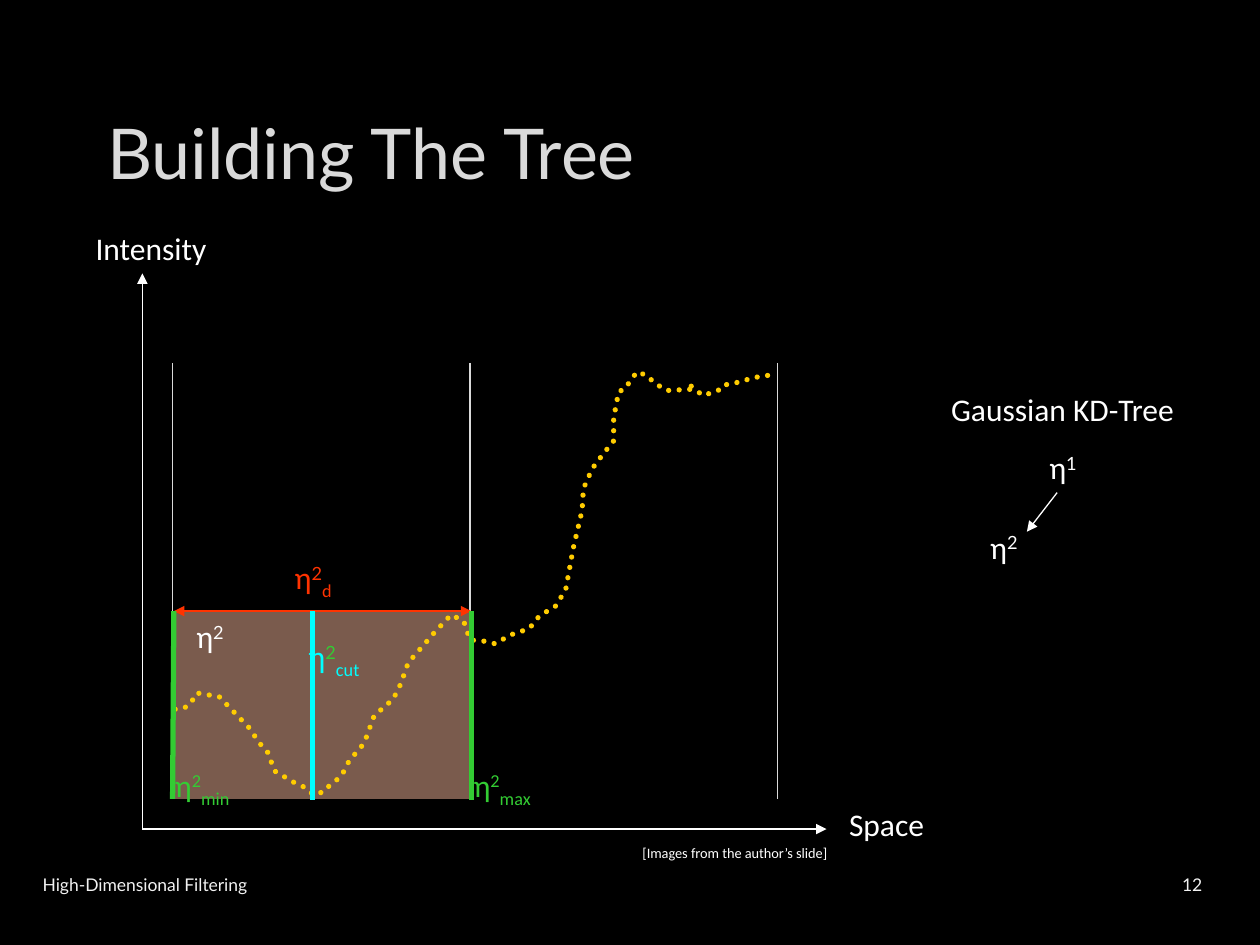
"""Build the slide on building a Gaussian KD-tree."""
from dataclasses import dataclass

from lxml import etree
from pptx import Presentation
from pptx.dml.color import RGBColor
from pptx.enum.dml import MSO_LINE
from pptx.enum.shapes import MSO_CONNECTOR, MSO_SHAPE
from pptx.enum.text import MSO_ANCHOR, PP_ALIGN
from pptx.oxml.ns import qn
from pptx.util import Inches, Pt

BLACK = RGBColor(0x00, 0x00, 0x00)
WHITE = RGBColor(0xFF, 0xFF, 0xFF)
PALE = RGBColor(0xF2, 0xF2, 0xF2)
GREY = RGBColor(0xDA, 0xDA, 0xDA)
PEACH = RGBColor(0xF4, 0xB6, 0x9B)
YELLOW = RGBColor(0xFF, 0xCC, 0x00)
RED = RGBColor(0xFF, 0x33, 0x00)
GREEN = RGBColor(0x33, 0xCC, 0x33)
CYAN = RGBColor(0x00, 0xFF, 0xFF)

LEFT, CUT, MIDDLE, RIGHT = 1.37, 2.48, 3.73, 6.17
TOP, SPLIT, BOTTOM = 2.88, 4.85, 6.34
ORIGIN = (1.13, 6.58)


@dataclass(frozen=True)
class Stroke:
    start: tuple[float, float]
    end: tuple[float, float]
    color: RGBColor
    width: float = 0.75
    heads: tuple[str, ...] = ()


@dataclass(frozen=True)
class Piece:
    text: str
    font: str = "Calibri"
    baseline: int = 0
    color: RGBColor | None = None


@dataclass(frozen=True)
class Label:
    box: tuple[float, float, float, float]
    pieces: tuple[Piece, ...]
    color: RGBColor = WHITE
    size: float = 18
    wrap: bool = False
    anchor: MSO_ANCHOR = MSO_ANCHOR.TOP
    align: PP_ALIGN = PP_ALIGN.LEFT


def eta(level: str, sub: str = "", font: str = "Lato",
        level_color: RGBColor | None = None) -> tuple[Piece, ...]:
    """Return the pieces of an eta symbol with its level and subscript."""
    pieces = (Piece("η"), Piece(level, font, 30, level_color))
    return pieces + ((Piece(sub, baseline=-25),) if sub else ())


BOUNDS = [Stroke((x, TOP), (x, BOTTOM), GREY, 1) for x in (LEFT, RIGHT, MIDDLE)]
STROKES = [
    Stroke(ORIGIN, (6.56, ORIGIN[1]), WHITE, heads=("tailEnd",)),
    Stroke(ORIGIN, (ORIGIN[0], 2.17), WHITE, heads=("tailEnd",)),
    Stroke((1.38, SPLIT), (3.74, SPLIT), RED, heads=("headEnd", "tailEnd")),
    Stroke((1.38, SPLIT), (LEFT, BOTTOM), GREEN, 3),
    Stroke((3.74, SPLIT), (3.74, 6.35), GREEN, 3),
    Stroke((CUT, SPLIT), (CUT, 6.35), CYAN, 3),
    Stroke((8.39, 3.91), (8.15, 4.22), WHITE, heads=("tailEnd",)),
]
LABELS = [
    Label((6.64, 6.34, 0.8, 0.4), (Piece("Space"),)),
    Label((0.66, 1.77, 1.09, 0.4), (Piece("Intensity"),)),
    Label((2.24, 4.38, 0.63, 0.7), eta("2", "d"), RED),
    Label((1.29, 6.03, 0.8, 0.4), eta("2", "min", "Calibri"), GREEN),
    Label((3.66, 6.03, 0.82, 0.4), eta("2", "max", "Calibri"), GREEN),
    Label((2.35, 5.01, 0.76, 0.4), eta("2", "cut", level_color=GREEN), CYAN),
    Label((8.23, 3.51, 0.63, 0.4), eta("1"), wrap=True),
    Label((7.45, 3.05, 1.99, 0.4), (Piece("Gaussian KD-Tree"),)),
    Label((7.76, 4.14, 0.63, 0.4), eta("2"), wrap=True),
    Label((1.46, 4.85, 0.63, 0.4), eta("2"), wrap=True),
    Label((5, 6.65, 1.71, 0.24), (Piece("[Images from the author’s slide]"),), size=8.2),
    Label((0.24, 6.82, 5.47, 0.4), (Piece("High-Dimensional Filtering", "Lato"),),
          PALE, 10, True, MSO_ANCHOR.MIDDLE),
    Label((9.02, 6.82, 0.62, 0.4), (Piece("12", "Lato"),),
          PALE, 10, True, MSO_ANCHOR.MIDDLE, PP_ALIGN.RIGHT),
]
SIGNAL = [
    (1.39, 5.63), (1.46, 5.62), (1.51, 5.59), (1.56, 5.5), (1.74, 5.53), (1.98, 5.78),
    (2.06, 5.9), (2.12, 5.96), (2.18, 6.12), (2.35, 6.22), (2.42, 6.25), (2.49, 6.31),
    (2.58, 6.28), (2.61, 6.24), (2.71, 6.16), (2.77, 6.04), (2.89, 5.9), (2.97, 5.68),
    (3.12, 5.55), (3.18, 5.43), (3.24, 5.26), (3.38, 5.1), (3.43, 5.04), (3.58, 4.88),
    (3.68, 4.93), (3.73, 5.08), (3.85, 5.09), (3.93, 5.11), (4.05, 5.04), (4.2, 4.99),
    (4.28, 4.89), (4.41, 4.81), (4.49, 4.68), (4.55, 4.35), (4.62, 4.05), (4.63, 3.88),
    (4.7, 3.72), (4.79, 3.6), (4.87, 3.5), (4.87, 3.32), (4.91, 3.11), (4.97, 3.08),
    (5, 3.02), (5.06, 2.95), (5.15, 2.99), (5.18, 3.03), (5.29, 3.1), (5.49, 3.09),
    (5.47, 3.05), (5.5, 3.08), (5.58, 3.14), (5.7, 3.1), (5.73, 3.06), (5.88, 3.03),
    (5.97, 3), (6.09, 2.98), (6.17, 2.99),
]


def set_all(target, values: dict) -> None:
    """Set each named attribute of the target."""
    for name, value in values.items():
        setattr(target, name, value)


def style_font(font, name: str, size: float, color: RGBColor) -> None:
    """Set the typeface, size and colour of a font."""
    set_all(font, {"name": name, "size": Pt(size)})
    font.color.rgb = color


def draw_stroke(s, stroke: Stroke) -> None:
    """Draw a straight line with its arrowheads."""
    points = [Inches(v) for v in stroke.start + stroke.end]
    line = s.shapes.add_connector(MSO_CONNECTOR.STRAIGHT, *points)
    line.line.color.rgb = stroke.color
    line.line.width = Pt(stroke.width)
    ln = line._element.spPr.find(qn("a:ln"))
    for head in stroke.heads:
        etree.SubElement(ln, qn(f"a:{head}"), type="triangle")
    etree.SubElement(line._element.spPr, qn("a:effectLst"))


def draw_label(s, label: Label) -> None:
    """Draw a text box made of formatted pieces."""
    tf = s.shapes.add_textbox(*map(Inches, label.box)).text_frame
    set_all(tf, {"word_wrap": label.wrap, "vertical_anchor": label.anchor})
    p = tf.paragraphs[0]
    p.alignment = label.align
    for piece in label.pieces:
        r = p.add_run()
        r.text = piece.text
        style_font(r.font, piece.font, label.size, piece.color or label.color)
        if piece.baseline:
            r._r.get_or_add_rPr().set("baseline", str(piece.baseline * 1000))


def draw_region(s) -> None:
    """Draw the half-transparent cell of the second node."""
    box = (LEFT, SPLIT, 2.37, BOTTOM - SPLIT)
    sp = s.shapes.add_shape(MSO_SHAPE.RECTANGLE, *map(Inches, box))
    sp.shadow.inherit = False
    sp.fill.solid()
    sp.fill.fore_color.rgb = PEACH
    sp.line.fill.background()
    color = sp._element.spPr.find(f"{qn('a:solidFill')}/{qn('a:srgbClr')}")
    etree.SubElement(color, qn("a:alpha"), val="50000")


def draw_signal(s) -> None:
    """Draw the dotted intensity curve."""
    start, *rest = [(Inches(x), Inches(y)) for x, y in SIGNAL]
    builder = s.shapes.build_freeform(*start)
    builder.add_line_segments(rest, close=False)
    sp = builder.convert_to_shape()
    sp.shadow.inherit = False
    sp.fill.background()
    sp.line.color.rgb = YELLOW
    set_all(sp.line, {"width": Pt(3), "dash_style": MSO_LINE.ROUND_DOT})
    sp._element.spPr.find(qn("a:ln")).set("cap", "rnd")


def draw_title(s) -> None:
    """Place and format the slide title."""
    title = s.shapes.title
    box = zip(("left", "top", "width", "height"), map(Inches, (0.75, 0.67, 8.49, 1.06)))
    set_all(title, dict(box))
    tf = title.text_frame
    tf.text = "Building The Tree"
    tf.vertical_anchor = MSO_ANCHOR.MIDDLE
    p = tf.paragraphs[0]
    p.alignment = PP_ALIGN.LEFT
    style_font(p.runs[0].font, "Lato", 40, GREY)


def main() -> None:
    """Build and save the presentation."""
    prs = Presentation()
    set_all(prs, {"slide_width": Inches(10), "slide_height": Inches(7.5)})
    s = prs.slides.add_slide(prs.slide_layouts[5])
    s.background.fill.solid()
    s.background.fill.fore_color.rgb = BLACK
    draw_title(s)
    for stroke in BOUNDS:
        draw_stroke(s, stroke)
    draw_region(s)
    draw_signal(s)
    for stroke in STROKES:
        draw_stroke(s, stroke)
    for label in LABELS:
        draw_label(s, label)
    prs.save("out.pptx")


if __name__ == "__main__":
    main()
